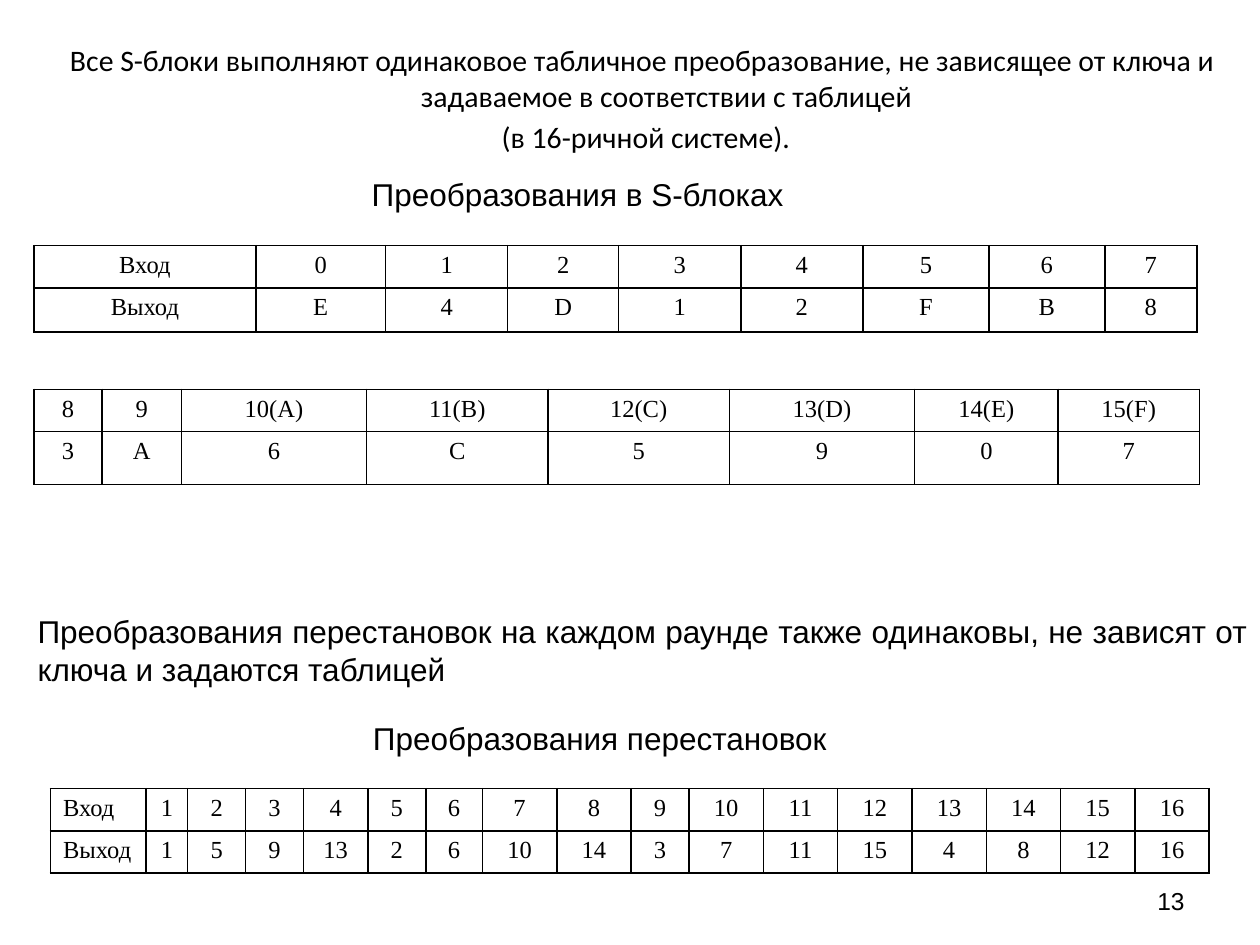
from lxml import etree
from pptx import Presentation
from pptx import util as u
from pptx.dml.color import RGBColor
from pptx.enum import text
from pptx.oxml import ns

Inches = u.Inches
COLORS = {"ink": "000000"}
ALIGN = text.PP_ALIGN


def write(frame, words, font="Arial", size=18, align=ALIGN.CENTER, hanging=0, first=True):
    """Write one paragraph into a text frame."""
    para = frame.paragraphs[0] if first else frame.add_paragraph()
    para.alignment = align
    props = para._p.get_or_add_pPr()
    if hanging:
        props.set("marL", str(Inches(hanging)))
        props.set("indent", str(-Inches(hanging)))
    etree.SubElement(props, ns.qn("a:buNone"))
    span = para.add_run()
    span.text = words
    span.font.name = font
    span.font.size = u.Pt(size)
    span.font.bold = False
    span.font.color.rgb = RGBColor.from_string(COLORS["ink"])


def add_grid(page, left, top, widths, heights, rows, hanging=0, first_align=ALIGN.CENTER):
    """Add an unfilled table with thin borders on all sides."""
    table = page.shapes.add_table(
        len(rows), len(widths), Inches(left), Inches(top),
        Inches(sum(widths)), Inches(sum(heights))).table
    table.first_row = table.horz_banding = False
    for column, width in zip(table.columns, widths):
        column.width = Inches(width)
    for row, height in zip(table.rows, heights):
        row.height = Inches(height)
    for r, values in enumerate(rows):
        for c, value in enumerate(values):
            cell = table.cell(r, c)
            write(cell.text_frame, value, font="Times New Roman", size=14,
                  align=ALIGN.CENTER if c else first_align, hanging=hanging)
            props = cell._tc.get_or_add_tcPr()
            for side in ("lnL", "lnR", "lnT", "lnB"):
                line = etree.SubElement(props, ns.qn("a:" + side), w=str(u.Pt(1)))
                fill = etree.SubElement(line, ns.qn("a:solidFill"))
                etree.SubElement(fill, ns.qn("a:srgbClr"), val=COLORS["ink"])
            cell.fill.background()


deck = Presentation()
deck.slide_width, deck.slide_height = Inches(10), Inches(7.5)
page = deck.slides.add_slide(deck.slide_layouts[1])
title = page.shapes.title
title._element.getparent().remove(title._element)

# Introduction
body = page.placeholders[1]
body.left, body.top, body.width, body.height = (Inches(n) for n in (0.2, 0.28, 9.8, 0.84))
body.text_frame.auto_size = text.MSO_AUTO_SIZE.NONE
intro = [
    "Все S-блоки выполняют одинаковое табличное преобразование, не зависящее от ключа "
    "и задаваемое в соответствии с таблицей",
    " (в 16-ричной системе).",
]
for index, words in enumerate(intro):
    write(body.text_frame, words, font="Calibri", size=17, hanging=0.38, first=index == 0)

# Captions and page number
captions = [
    ("Преобразования в S-блоках", (2.05, 1.28, 5.07, 0.51), 18, ALIGN.CENTER, True),
    ("Преобразования перестановок на каждом раунде также одинаковы, не зависят от ключа "
     "и задаются таблицей", (0.2, 4.7, 9.8, 0.91), 18, ALIGN.JUSTIFY, True),
    ("Преобразования перестановок", (2.85, 5.66, 3.82, 0.4), 18, ALIGN.CENTER, False),
    ("13", (7.17, 6.95, 2.33, 0.4), 14, ALIGN.RIGHT, True),
]
for words, place, size, align, wrap in captions:
    box = page.shapes.add_textbox(*(Inches(n) for n in place))
    box.text_frame.word_wrap = wrap
    box.text_frame.vertical_anchor = text.MSO_ANCHOR.MIDDLE
    write(box.text_frame, words, size=size, align=align)

# S-block tables
add_grid(page, 0.27, 1.95, [1.76, 1.03, 0.97, 0.88, 0.97, 0.97, 1, 0.92, 0.73], [0.32, 0.35],
         [["Вход", *"01234567"], ["Выход", *"E4D12FB8"]], hanging=0.38)
add_grid(page, 0.27, 3.09, [0.54, 0.63, 1.47, 1.44, 1.44, 1.47, 1.14, 1.12], [0.33, 0.42],
         [["8", "9", "10(A)", "11(B)", "12(C)", "13(D)", "14(E)", "15(F)"], [*"3A6C5907"]],
         hanging=0.38)

# Permutation table: the output is the transposed 4 x 4 grid of positions
inputs = [str(n) for n in range(1, 17)]
outputs = [str(start + 4 * step) for start in range(1, 5) for step in range(4)]
add_grid(page, 0.4, 6.26,
         [0.76, 0.33, 0.46, 0.46, 0.51, 0.46, 0.45, 0.59, 0.59, 0.46] + [0.59] * 7,
         [0.33, 0.33], [["Вход", *inputs], ["Выход", *outputs]], first_align=ALIGN.LEFT)

deck.save("out.pptx")
